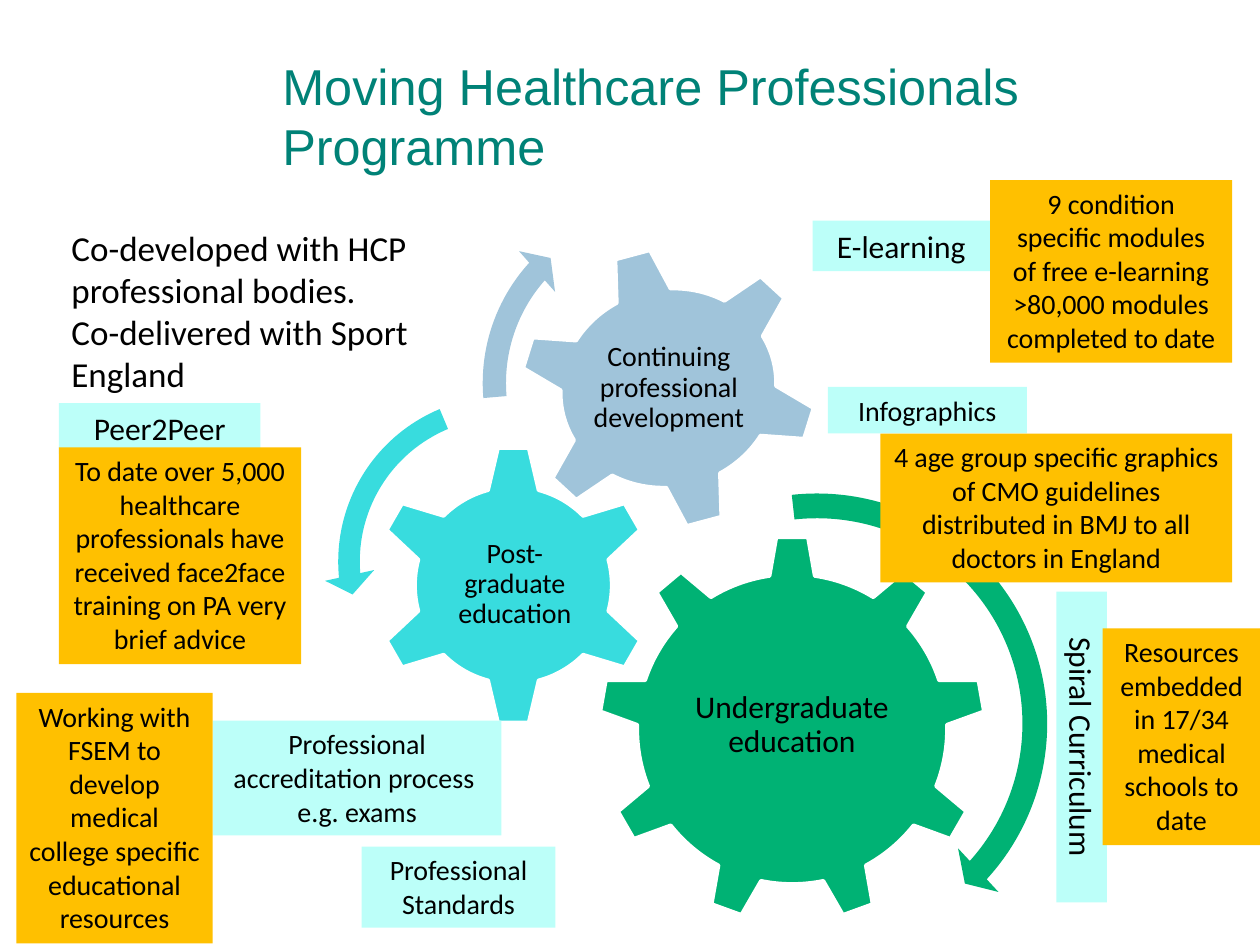
from dataclasses import dataclass

import pptx
import pptx.dml.color
import pptx.enum.shapes
import pptx.enum.text
import pptx.util

Cm = pptx.util.Cm
Pt = pptx.util.Pt
MSO_SHAPE = pptx.enum.shapes.MSO_SHAPE
MSO_ANCHOR = pptx.enum.text.MSO_ANCHOR
MSO_AUTO_SIZE = pptx.enum.text.MSO_AUTO_SIZE
PP_ALIGN = pptx.enum.text.PP_ALIGN


@dataclass(frozen=True)
class Theme:
    title_color: str = "008277"
    text_color: str = "000000"
    outline: str = "FFFFFF"
    topic: str = "BCFFF9"
    detail: str = "FFC000"
    undergraduate: str = "00B274"
    postgraduate: str = "38DCDE"
    continuing: str = "A0C4DA"
    title_font: str = "Arial"
    body_font: str = "Calibri"
    title_size: float = 28.8
    intro_size: float = 20
    large_size: float = 18
    label_size: float = 16


THEME = Theme()

# label, gear preset, gear place, rotation, text place, text size, colour
GEARS = [
    ("Undergraduate education", MSO_SHAPE.GEAR_9, (12.07, 10.8, 7.8, 7.8), 0,
     (13.64, 12.62, 4.65, 4.01), THEME.large_size, THEME.undergraduate),
    ("Post-graduate education", MSO_SHAPE.GEAR_6, (7.52, 8.97, 5.66, 5.66), 0,
     (8.97, 10.39, 2.82, 2.79), THEME.label_size, THEME.postgraduate),
    ("Continuing professional development", MSO_SHAPE.GEAR_6,
     (10.44, 4.98, 6.07, 5.69), 345,
     (11.81, 6.2, 3.35, 3.25), THEME.label_size, THEME.continuing),
]

# preset, left, top, side, adjustments, colour
TURN_ARROWS = [
    (MSO_SHAPE.CIRCULAR_ARROW, 11.48, 9.6, 9.98,
     (0.05, 2.99, 25.34, 158.23, 0.06), THEME.undergraduate),
    (MSO_SHAPE.LEFT_CIRCULAR_ARROW, 6.53, 7.7, 7.24,
     (0.06, 4.3, 104.89, 148.38, 0.07), THEME.postgraduate),
    (MSO_SHAPE.CIRCULAR_ARROW, 9.42, 3.81, 7.82,
     (0.06, 3.94, 133.14, 105.08, 0.07), THEME.continuing),
]

# paragraphs, place, text size, rotation
TOPICS = [
    (["Professional accreditation process ", "e.g. exams"],
     (4.29, 14.53, 5.82, 2.31), THEME.label_size, 0),
    (["Peer2Peer"], (1.19, 8.13, 4.06, 1.02), THEME.large_size, 0),
    (["Spiral Curriculum"], (18.67, 14.55, 6.27, 1.02), THEME.large_size, 90),
    (["Professional Standards"], (7.29, 17.07, 3.91, 1.63), THEME.label_size, 0),
    (["Infographics"], (16.69, 7.8, 4.01, 0.94), THEME.label_size, 0),
    (["E-learning"], (16.38, 4.45, 3.58, 1.02), THEME.large_size, 0),
]

# paragraphs, place
DETAILS = [
    (["9 condition specific modules of free e-learning",
      ">80,000 modules completed to date"], (19.96, 3.63, 4.88, 3.68)),
    (["4 age group specific graphics of CMO guidelines distributed in BMJ "
      "to all doctors in England"], (17.75, 8.74, 7.09, 3)),
    (["Resources embedded in 17/34 medical schools to date"],
     (22.23, 12.67, 3.18, 4.37)),
    (["To date over 5,000 healthcare professionals have received face2face "
      "training on PA very brief advice"], (1.19, 9.02, 4.88, 4.37)),
    (["Working with FSEM to develop medical college specific educational "
      "resources"], (0.33, 13.97, 3.96, 5.05)),
]


def rgb(color):
    return pptx.dml.color.RGBColor.from_string(color)


def lengths(place):
    return [Cm(value) for value in place]


def write_text(frame, paragraphs, size, align=PP_ALIGN.CENTER,
               font=THEME.body_font, color=THEME.text_color):
    frame.word_wrap = True
    for index, text in enumerate(paragraphs):
        paragraph = frame.paragraphs[0] if index == 0 else frame.add_paragraph()
        paragraph.text = text
        paragraph.alignment = align
        paragraph.font.name = font
        paragraph.font.size = Pt(size)
        paragraph.font.color.rgb = rgb(color)


def set_margins(frame, margin):
    frame.margin_left = frame.margin_right = Cm(margin)
    frame.margin_top = frame.margin_bottom = Cm(margin)


def add_filled_shape(shapes, preset, place, color):
    shape = shapes.add_shape(preset, *lengths(place))
    shape.shadow.inherit = False
    shape.fill.solid()
    shape.fill.fore_color.rgb = rgb(color)
    shape.line.fill.background()
    return shape


def add_gear(shapes, label, preset, place, rotation, text_place, size, color):
    gear = add_filled_shape(shapes, preset, place, color)
    gear.rotation = rotation
    gear.line.color.rgb = rgb(THEME.outline)
    gear.line.width = Pt(2)
    frame = shapes.add_textbox(*lengths(text_place)).text_frame
    frame.vertical_anchor = MSO_ANCHOR.MIDDLE
    set_margins(frame, 0.06)
    write_text(frame, [label], size)
    frame.paragraphs[0].line_spacing = 0.9


def add_turn_arrow(shapes, preset, left, top, side, adjustments, color):
    arrow = add_filled_shape(shapes, preset, (left, top, side, side), color)
    for index, value in enumerate(adjustments):
        arrow.adjustments[index] = value


def add_box(shapes, paragraphs, place, color, size=THEME.label_size, rotation=0):
    box = add_filled_shape(shapes, MSO_SHAPE.RECTANGLE, place, color)
    box.rotation = rotation
    box.text_frame.vertical_anchor = MSO_ANCHOR.TOP
    write_text(box.text_frame, paragraphs, size)
    box.text_frame.auto_size = MSO_AUTO_SIZE.SHAPE_TO_FIT_TEXT


def add_title(slide, text):
    title = slide.shapes.title
    title.left, title.top, title.width, title.height = lengths(
        (5.69, 1.32, 18.8, 2.01))
    frame = title.text_frame
    frame.vertical_anchor = MSO_ANCHOR.MIDDLE
    frame.auto_size = MSO_AUTO_SIZE.NONE
    set_margins(frame, 0)
    write_text(frame, [text], THEME.title_size, PP_ALIGN.LEFT,
               THEME.title_font, THEME.title_color)


def add_intro(shapes, paragraphs):
    frame = shapes.add_textbox(*lengths((1.19, 4.45, 8.05, 3.68))).text_frame
    write_text(frame, paragraphs, THEME.intro_size, PP_ALIGN.LEFT)
    frame.auto_size = MSO_AUTO_SIZE.SHAPE_TO_FIT_TEXT


def main():
    presentation = pptx.Presentation()
    presentation.slide_width = Cm(25.4)
    presentation.slide_height = Cm(19.05)
    slide = presentation.slides.add_slide(presentation.slide_layouts[5])

    gear_train = slide.shapes.add_group_shape()
    for gear in GEARS:
        add_gear(gear_train.shapes, *gear)
    for arrow in TURN_ARROWS:
        add_turn_arrow(gear_train.shapes, *arrow)

    add_title(slide, "Moving Healthcare Professionals Programme")
    for paragraphs, place, size, rotation in TOPICS:
        add_box(slide.shapes, paragraphs, place, THEME.topic, size, rotation)
    for paragraphs, place in DETAILS:
        add_box(slide.shapes, paragraphs, place, THEME.detail)
    add_intro(slide.shapes, ["Co-developed with HCP professional bodies.",
                             "Co-delivered with Sport England"])

    presentation.save("out.pptx")


if __name__ == "__main__":
    main()
